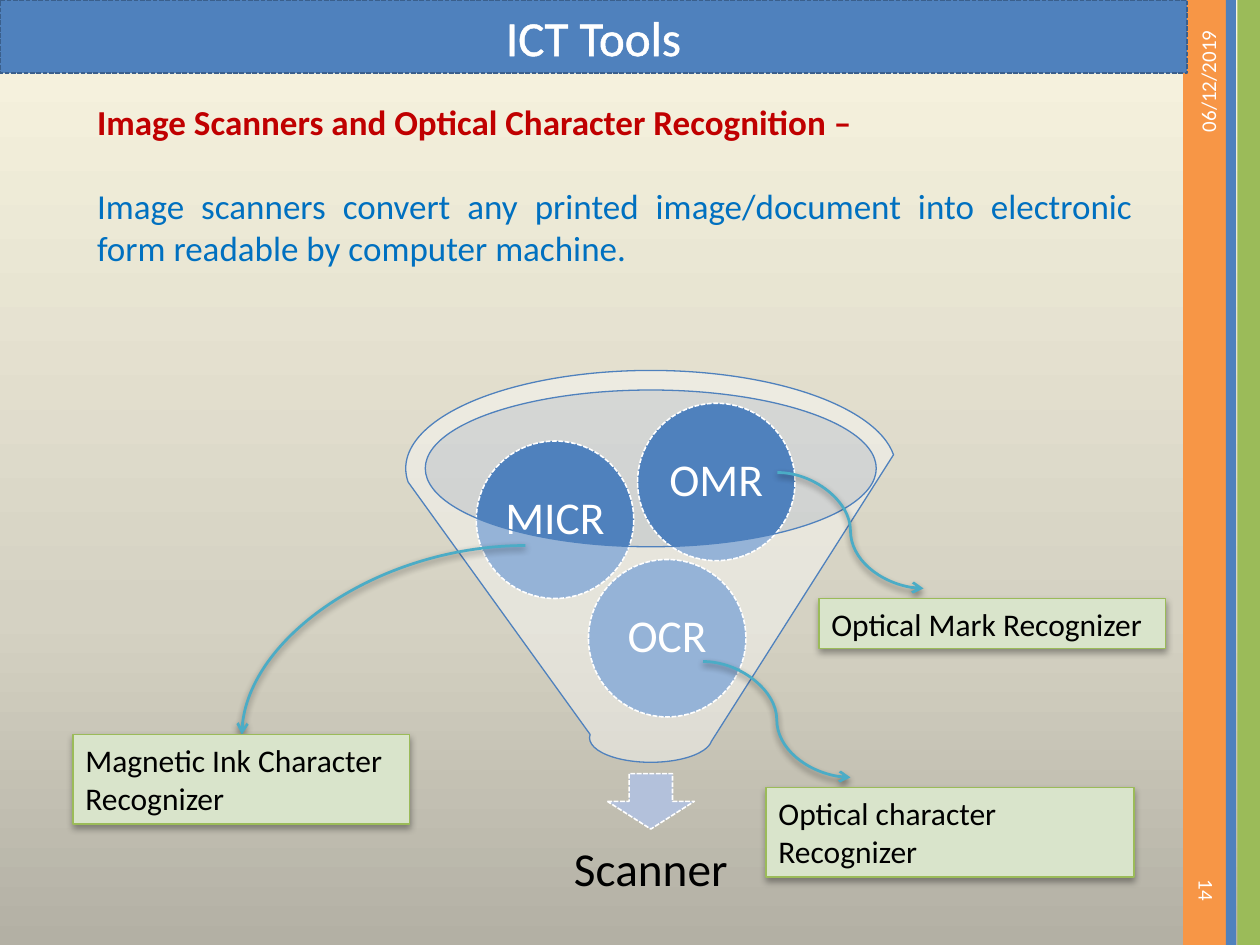
from copy import deepcopy
from pptx import Presentation
from pptx.dml.color import RGBColor
from pptx.enum import dml, shapes, text
from pptx.oxml import ns, xmlchemy
from pptx.util import Inches, Pt
from lxml import etree

WHITE = RGBColor(0xFF, 0xFF, 0xFF)
BLACK = RGBColor(0, 0, 0)
RED = RGBColor(0xC0, 0, 0)
SKY = RGBColor(0, 0x70, 0xC0)
BLUE = RGBColor(0x4F, 0x81, 0xBD)
NAVY = RGBColor(0x3A, 0x5F, 0x8C)
PALE = RGBColor(0xC2, 0xCD, 0xE1)
MIST = RGBColor(0xB3, 0xC1, 0xDB)
ORANGE = RGBColor(0xF7, 0x96, 0x46)
GREEN = RGBColor(0x9B, 0xBB, 0x59)
MINT = RGBColor(0xD9, 0xE4, 0xCB)
TEAL = RGBColor(0x4B, 0xAC, 0xC6)
GRADE = [(0, RGBColor(0xB3, 0xB0, 0xA4)), (0.35, RGBColor(0xD5, 0xD2, 0xC3)),
         (1, RGBColor(0xF9, 0xF5, 0xE0))]
KIND = shapes.MSO_SHAPE
ALIGN = text.PP_ALIGN
MID = text.MSO_ANCHOR.MIDDLE


def sub(node, tag, **attrs):
    return etree.SubElement(node, ns.qn(tag), {k: str(v) for k, v in attrs.items()})


def place(shape, box):
    shape.left, shape.top, shape.width, shape.height = map(Inches, box)


def stroke(shape, color, width, dash=False):
    shape.line.color.rgb = color
    shape.line.width = Pt(width)
    if dash:
        shape.line.dash_style = dml.MSO_LINE.SQUARE_DOT


def draw(slide, kind, box, fill, alpha=None):
    shape = slide.shapes.add_shape(kind, *map(Inches, box))
    shape.fill.solid()
    shape.fill.fore_color.rgb = fill
    shape.line.fill.background()
    shape.shadow.inherit = False
    if alpha:
        tint = shape._element.spPr.find(".//" + ns.qn("a:srgbClr"))
        sub(tint, "a:alpha", val=alpha * 1000)
    return shape


def cast(shape, alpha):
    props = shape._element.spPr
    glow = props.find(ns.qn("a:effectLst"))
    if glow is None:
        glow = sub(props, "a:effectLst")
    shade = sub(glow, "a:outerShdw", blurRad=Pt(4), dist=Pt(2), dir=5400000, rotWithShape=0)
    sub(sub(shade, "a:srgbClr", val=BLACK), "a:alpha", val=alpha * 1000)


def write(para, words, size, color, align=ALIGN.LEFT, bold=False):
    para.alignment = align
    run = para.add_run()
    run.text = words
    run.font.name = "Calibri"
    run.font.size = Pt(size)
    run.font.bold = bold
    run.font.color.rgb = color
    return run


def inset(frame, gap):
    frame.margin_left = frame.margin_right = Inches(gap)
    frame.margin_top = frame.margin_bottom = Inches(gap)


def label(slide, box, words, size, color, align, turn=0):
    shape = slide.shapes.add_textbox(*map(Inches, box))
    shape.rotation = turn
    frame = shape.text_frame
    frame.word_wrap = True
    frame.vertical_anchor = MID
    write(frame.paragraphs[0], words, size, color, align)
    return frame


def ground(slide):
    fill = slide.background.fill
    fill.gradient()
    fill.gradient_angle = 90
    first = fill.gradient_stops[0]._gs
    first.addnext(deepcopy(first))
    for stop, (spot, color) in zip(fill.gradient_stops, GRADE):
        stop.position = spot
        stop.color.rgb = color


def rail(slide, box):
    left, top, width, height = box
    for shift, wide, color in [(0, 0.35, ORANGE), (0.43, width - 0.43, GREEN), (0.34, 0.08, BLUE)]:
        draw(slide, KIND.RECTANGLE, (left + shift, top, wide, height), color)
    label(slide, (left - 0.97, top + 1.11, 2.33, 0.4), "06/12/2019", 12, WHITE, ALIGN.RIGHT, 270)
    label(slide, (left - 0.34, top + 6.52, 1.06, 0.4), "14", 12, WHITE, ALIGN.RIGHT, 90)


def banner(slide, box):
    title = slide.shapes.title
    place(title, box)
    title.fill.solid()
    title.fill.fore_color.rgb = BLUE
    stroke(title, NAVY, 0.9, True)
    title.text_frame.vertical_anchor = MID
    run = write(title.text_frame.paragraphs[0], "ICT Tools", 28, WHITE, ALIGN.CENTER)
    edge = etree.Element(ns.qn("a:ln"), w=str(Pt(1.45)))
    sub(sub(edge, "a:solidFill"), "a:srgbClr", val=WHITE)
    run.font._element.insert(0, edge)
    slide.shapes._spTree.append(title._element)


def body(slide, box):
    shape = slide.placeholders[1]
    place(shape, box)
    frame = shape.text_frame
    frame.auto_size = text.MSO_AUTO_SIZE.NONE
    head, tail = frame.paragraphs[0], frame.add_paragraph()
    write(head, "Image Scanners and Optical Character Recognition –", 20, RED, ALIGN.JUSTIFY, True)
    write(tail, "Image scanners convert any printed image/document into electronic "
          "form readable by computer machine.", 20, SKY, ALIGN.JUSTIFY)
    for para, gap in [(head, 0), (tail, 24)]:
        para.space_before = Pt(gap)
        props = para._p.get_or_add_pPr()
        props.set("marL", "0")
        props.set("indent", "0")
        sub(props, "a:buNone")


def funnel(slide, box):
    left, top, width, height = box
    draw(slide, KIND.OVAL, (left + 0.15, top + 0.16, 3.58, 1.24), PALE, 40)
    arrow = draw(slide, KIND.DOWN_ARROW, (left + 1.6, top + 3.2, 0.69, 0.44), MIST)
    stroke(arrow, WHITE, 0.9, True)
    frame = label(slide, (left + 0.28, top + 3.56, 3.33, 0.83), "Scanner", 27, BLACK, ALIGN.CENTER)
    inset(frame, 0.21)
    frame.paragraphs[0].line_spacing = 0.9
    for words, x, y in [("OCR", 1.45, 1.5), ("MICR", 0.56, 0.56), ("OMR", 1.84, 0.26)]:
        ball = draw(slide, KIND.OVAL, (left + x, top + y, 1.25, 1.25), BLUE)
        stroke(ball, WHITE, 0.9, True)
        frame = ball.text_frame
        inset(frame, 0.04)
        frame.word_wrap = False
        frame.vertical_anchor = MID
        write(frame.paragraphs[0], words, 26, WHITE, ALIGN.CENTER)
        frame.paragraphs[0].line_spacing = 0.9
    cone = draw(slide, KIND.FUNNEL, box, WHITE, 40)
    stroke(cone, BLUE, 0.75)


def note(slide, box, words, start, end, bend):
    link = slide.shapes.add_connector(shapes.MSO_CONNECTOR.CURVE, *map(Inches, start + end))
    link._element.spPr.find(ns.qn("a:prstGeom")).set("prst", bend)
    stroke(link, TEAL, 1.57)
    sub(link.line._get_or_add_ln(), "a:tailEnd", type="arrow")
    cast(link, 45)
    card = draw(slide, KIND.RECTANGLE, box, MINT)
    stroke(card, GREEN, 0.75)
    cast(card, 35)
    card.text_frame.vertical_anchor = text.MSO_ANCHOR.TOP
    write(card.text_frame.paragraphs[0], words, 18, BLACK)


def main():
    deck = Presentation()
    deck.slide_width, deck.slide_height = Inches(10), Inches(7.5)
    slide = deck.slides.add_slide(deck.slide_layouts[1])
    ground(slide)
    rail(slide, (9.39, 0, 0.61, 7.5))
    body(slide, (0.67, 0.75, 8.42, 1.45))
    funnel(slide, (3.22, 2.94, 3.89, 3.11))
    note(slide, (0.58, 5.83, 2.67, 0.71), "Magnetic Ink Character Recognizer",
         (4.17, 4.33), (1.92, 5.83), "curvedConnector2")
    note(slide, (6.5, 4.75, 2.75, 0.4), "Optical Mark Recognizer",
         (6.17, 3.75), (7.33, 4.67), "curvedConnector3")
    note(slide, (6.08, 6.25, 2.92, 0.71), "Optical character Recognizer",
         (5.58, 5.25), (6.75, 6.17), "curvedConnector3")
    banner(slide, (0, 0, 9.42, 0.58))
    deck.save("out.pptx")


if __name__ == "__main__":
    main()
